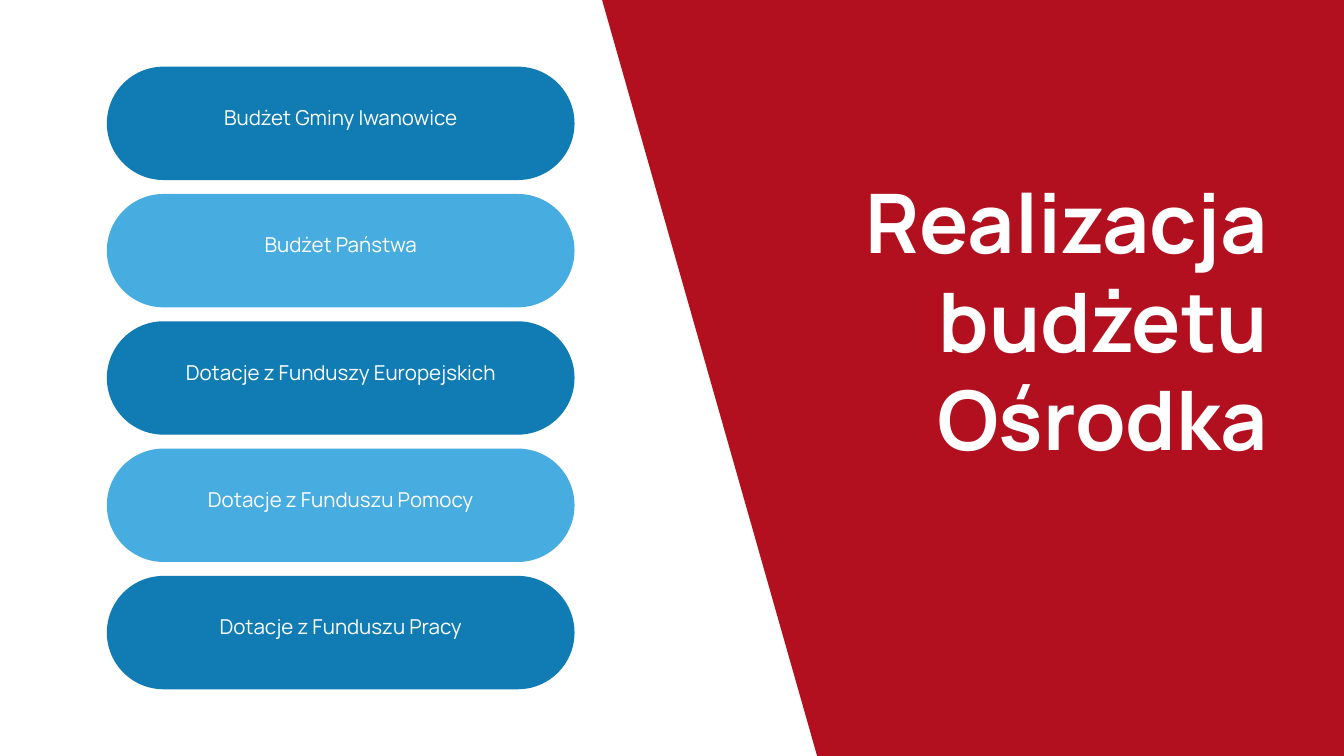
from pptx import Presentation
from pptx.dml.color import RGBColor
from pptx.enum.shapes import MSO_SHAPE
from pptx.enum.text import MSO_ANCHOR, MSO_AUTO_SIZE, PP_ALIGN
from pptx.util import Inches, Pt

WHITE = RGBColor(0xFF, 0xFF, 0xFF)
RED = RGBColor(0xB2, 0x10, 0x1F)
DARK_BLUE = RGBColor(0x10, 0x7C, 0xB3)
LIGHT_BLUE = RGBColor(0x47, 0xAC, 0xDF)

PILL = MSO_SHAPE.ROUNDED_RECTANGLE
TOP, MIDDLE = MSO_ANCHOR.TOP, MSO_ANCHOR.MIDDLE
CENTER, RIGHT = PP_ALIGN.CENTER, PP_ALIGN.RIGHT
NO_AUTOFIT = MSO_AUTO_SIZE.NONE

GRID = 100
TITLE_ONLY = 5
PILL_TOP, PILL_PITCH = 8.82, 16.84
SOURCES = [
    "Budżet Gminy Iwanowice",
    "Budżet Państwa",
    "Dotacje z Funduszy Europejskich",
    "Dotacje z Funduszu Pomocy",
    "Dotacje z Funduszu Pracy",
]


def apply(target, values):
    for name, value in values.items():
        setattr(target, name, value)


class BudgetSlide:
    font = {"name": "Manrope"}

    def __init__(self, deck):
        self.deck = deck
        self.page = deck.slides.add_slide(deck.slide_layouts[TITLE_ONLY])

    def across(self, columns):
        return round(self.deck.slide_width * columns / GRID)

    def down(self, rows):
        return round(self.deck.slide_height * rows / GRID)

    def frame(self, left, top, width, height):
        return self.across(left), self.down(top), self.across(width), self.down(height)

    def paint(self, shape, color):
        shape.shadow.inherit = False
        shape.fill.solid()
        shape.fill.fore_color.rgb = color
        shape.line.fill.background()

    def label(self, box, text, margins, anchor, align, size, leading, bold):
        text_frame = box.text_frame
        sides = ("margin_left", "margin_top", "margin_right", "margin_bottom")
        apply(text_frame, dict(zip(sides, map(Inches, margins))))
        apply(text_frame, {"word_wrap": True, "auto_size": NO_AUTOFIT, "vertical_anchor": anchor})
        para = text_frame.paragraphs[0]
        apply(para, {"alignment": align, "line_spacing": Pt(leading)})
        span = para.add_run()
        span.text = text
        apply(span.font, self.font | {"size": Pt(size), "bold": bold})
        span.font.color.rgb = WHITE

    def panel(self, corners, color):
        points = [(self.across(x), self.down(y)) for x, y in corners]
        builder = self.page.shapes.build_freeform(*points[0])
        builder.add_line_segments(points[1:], close=True)
        self.paint(builder.convert_to_shape(), color)

    def title(self, text, *place):
        box = self.page.shapes.title
        box.element.getparent().append(box.element)
        apply(box, dict(zip(("left", "top", "width", "height"), self.frame(*place))))
        self.label(box, text, (0, 0, 0, 0), TOP, RIGHT, 88, 105.6, True)

    def pill(self, text, color, *place):
        box = self.page.shapes.add_shape(PILL, *self.frame(*place))
        box.adjustments[0] = 0.5
        self.paint(box, color)
        self.label(box, text, (0.06, 0.06, 0.06, 0.3), MIDDLE, CENTER, 22, 30.8, False)


def main():
    deck = Presentation()
    deck.slide_width, deck.slide_height = Inches(20), Inches(11.25)
    slide = BudgetSlide(deck)
    slide.panel([(44.8, 0), (GRID, 0), (GRID, GRID), (60.8, GRID)], RED)
    slide.title("Realizacja budżetu Ośrodka", 55.6, 22.67, 38.75, 39.73)
    for row, source in enumerate(SOURCES):
        color = LIGHT_BLUE if row % 2 else DARK_BLUE
        slide.pill(source, color, 7.95, PILL_TOP + row * PILL_PITCH, 34.8, 15)
    deck.save("out.pptx")


if __name__ == "__main__":
    main()
